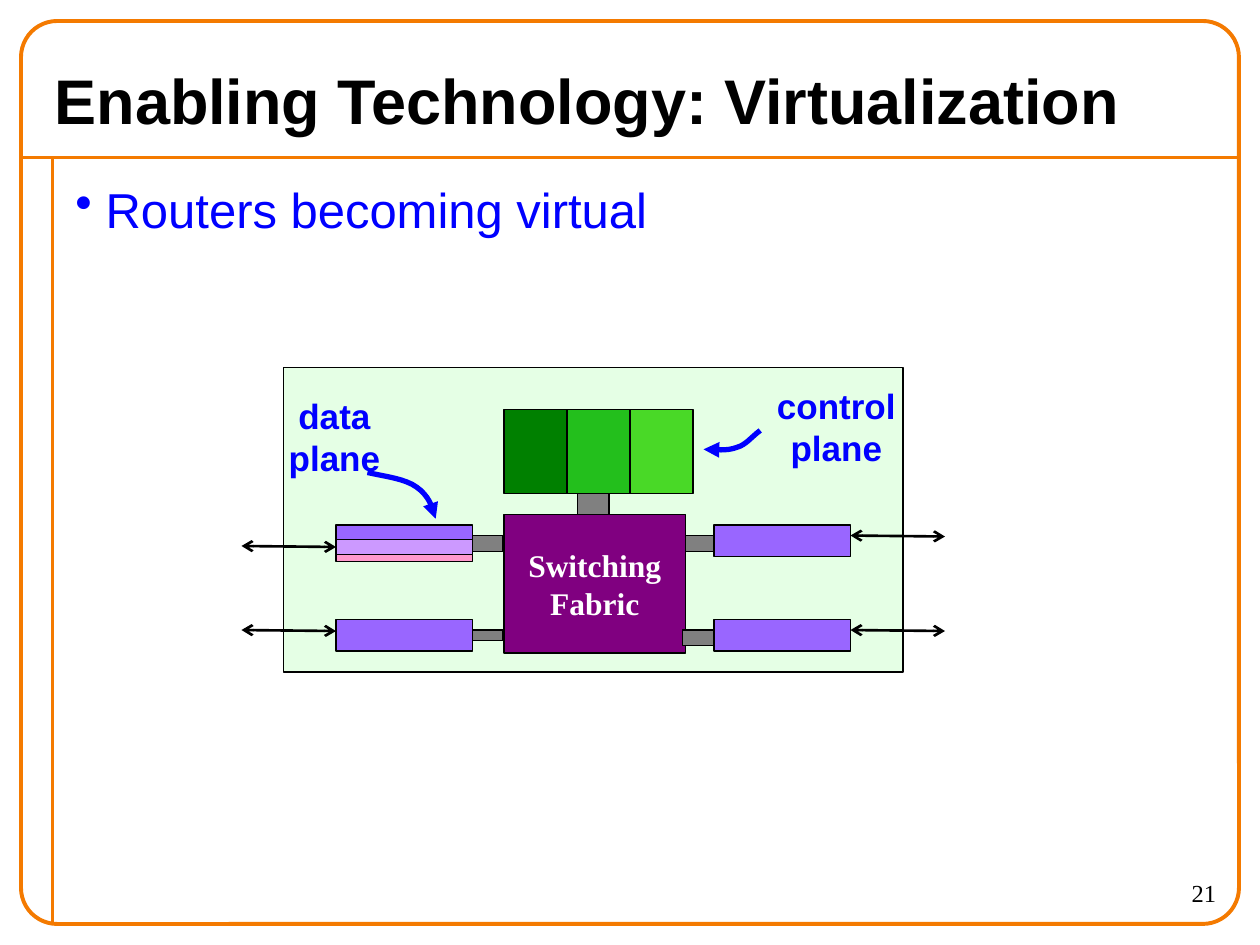
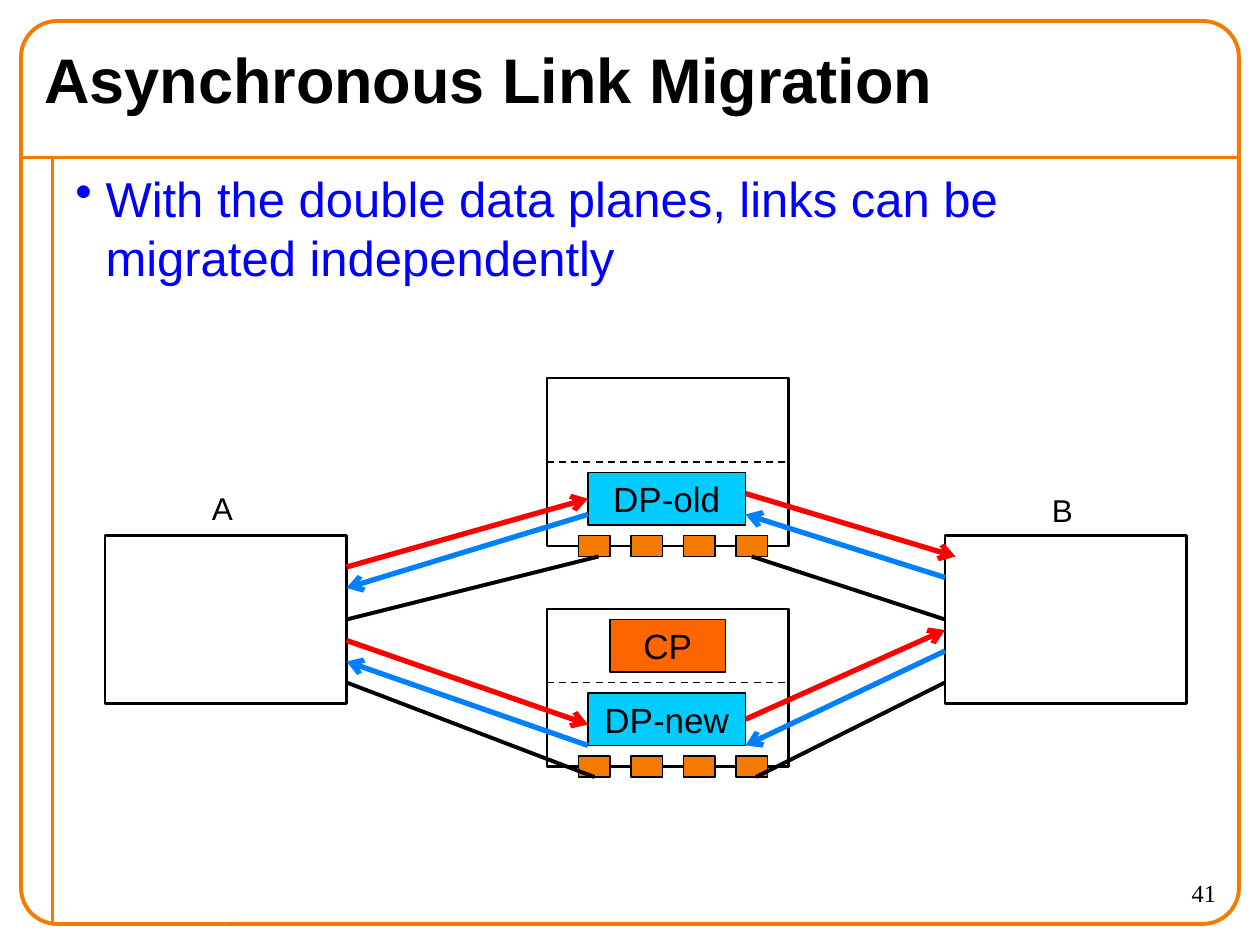
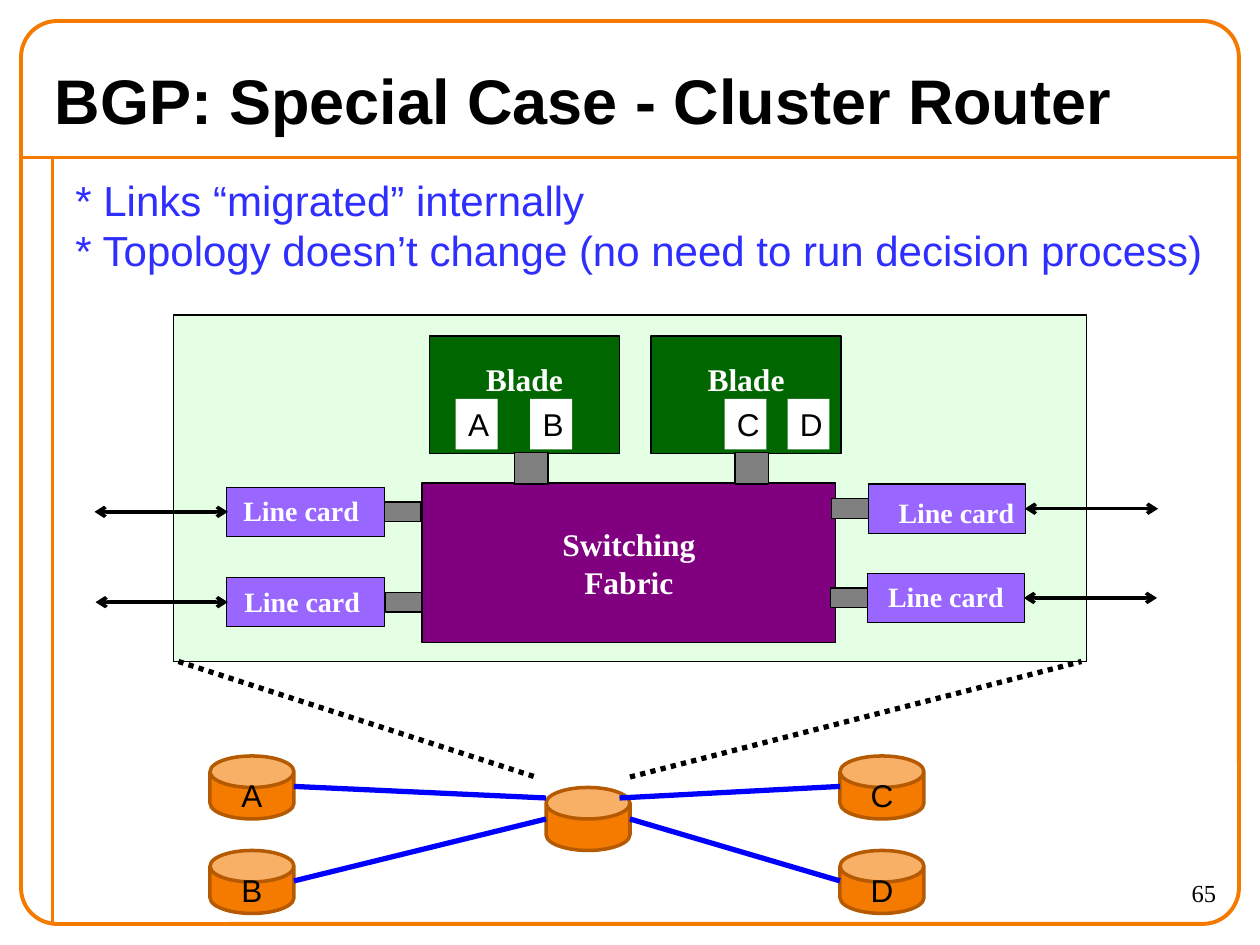
import pptx
import pptx.util
import pptx.dml.color
import pptx.enum.dml
import pptx.enum.shapes
import pptx.enum.text
import pptx.oxml.ns
import lxml.etree

RGB = pptx.dml.color.RGBColor
SHAPE = pptx.enum.shapes.MSO_SHAPE
ALIGN = pptx.enum.text.PP_ALIGN
ANCHOR = pptx.enum.text.MSO_ANCHOR
DASH = pptx.enum.dml.MSO_LINE
qn = pptx.oxml.ns.qn

BLACK = RGB(0x00, 0x00, 0x00)
WHITE = RGB(0xFF, 0xFF, 0xFF)
ORANGE = RGB(0xF4, 0x7A, 0x00)
BROWN = RGB(0xB5, 0x5A, 0x00)
CONTROL_ORANGE = RGB(0xFF, 0x66, 0x00)
BLUE = RGB(0x00, 0x00, 0xFF)
NOTE_BLUE = RGB(0x2E, 0x2E, 0xFF)
LINK_BLUE = RGB(0x00, 0x80, 0xFF)
CYAN = RGB(0x00, 0xCC, 0xFF)
RED = RGB(0xFF, 0x00, 0x00)
GRAY = RGB(0x80, 0x80, 0x80)
PALE_GREEN = RGB(0xCC, 0xFF, 0xCC)
BLADE_GREEN = RGB(0x00, 0x66, 0x00)
PLANE_GREENS = (RGB(0x00, 0x80, 0x00), RGB(0x23, 0xBF, 0x1C), RGB(0x49, 0xD9, 0x27))
PURPLE = RGB(0x80, 0x00, 0x80)
VIOLET = RGB(0x99, 0x66, 0xFF)
LILAC = RGB(0xCC, 0x99, 0xFF)
PINK = RGB(0xFF, 0x99, 0xCC)

SANS, SERIF = "Arial", "Times New Roman"
COLUMNS, ROWS = 120, 90
CELL = pptx.util.Inches(10) // COLUMNS


def cells(*counts):
    """Turn counts of grid columns or rows into slide lengths."""
    return [round(count * CELL) for count in counts]


def add_element(parent, tag, **attributes):
    return lxml.etree.SubElement(parent, qn(tag), attributes)


def write(shape, text, size=18, font=SANS, color=BLACK, bold=False, align=ALIGN.LEFT,
          anchor=ANCHOR.TOP, wrap=True, bullet=None, top=0.05, bottom=0.05):
    frame = shape.text_frame
    frame.text = text
    frame.word_wrap = wrap
    frame.vertical_anchor = anchor
    frame.margin_top = pptx.util.Inches(top)
    frame.margin_bottom = pptx.util.Inches(bottom)
    for para in frame.paragraphs:
        para.alignment = align
        if bullet:
            indent = pptx.util.Inches(0.24)
            properties = para._p.get_or_add_pPr()
            properties.set("marL", str(indent))
            properties.set("indent", str(-indent))
            add_element(properties, "a:buChar", char=bullet)
        for span in para.runs:
            span.font.name = font
            span.font.size = pptx.util.Pt(size)
            span.font.bold = bold
            span.font.color.rgb = color


def add_text(page, at, text, **text_format):
    box = page.shapes.add_textbox(*cells(*at))
    write(box, text, **text_format)
    return box


def add_block(page, at, fill=None, line=BLACK, width=0.75, kind=SHAPE.RECTANGLE,
              adjust=None, opacity=None):
    block = page.shapes.add_shape(kind, *cells(*at))
    block.shadow.inherit = False
    if adjust is not None:
        block.adjustments[0] = adjust
    if fill is None:
        block.fill.background()
    else:
        block.fill.solid()
        block.fill.fore_color.rgb = fill
    if opacity is not None:
        color = block.element.spPr.find(".//" + qn("a:srgbClr"))
        add_element(color, "a:alpha", val=str(opacity * 1000))
    if line is None:
        block.line.fill.background()
    else:
        block.line.color.rgb = line
        block.line.width = pptx.util.Pt(width)
    return block


def add_arrowheads(shape, head=None, tail=None):
    outline = shape.element.spPr.find(qn("a:ln"))
    for tag, kind in (("a:headEnd", head), ("a:tailEnd", tail)):
        if kind:
            add_element(outline, tag, type=kind)


def add_line(page, start, end, color=BLACK, width=2.25, dash=None, head=None, tail=None):
    line = page.shapes.add_connector(pptx.enum.shapes.MSO_CONNECTOR.STRAIGHT,
                                     *cells(*start, *end))
    line.line.color.rgb = color
    line.line.width = pptx.util.Pt(width)
    if dash:
        line.line.dash_style = dash
    add_arrowheads(line, head, tail)
    add_element(line.element.spPr, "a:effectLst")


def add_two_way_link(page, start, end, width):
    add_line(page, start, end, width=width, head="arrow", tail="arrow")


def curve_points(knots, steps=8):
    """Points along joined cubic curves: a start, then three knots per curve."""
    for first in range(0, len(knots) - 1, 3):
        a, b, c, d = knots[first:first + 4]
        for step in range(1, steps + 1):
            t = step / steps
            weights = ((1 - t) ** 3, 3 * t * (1 - t) ** 2, 3 * t * t * (1 - t), t ** 3)
            yield tuple(sum(weight * knot[axis] for weight, knot in zip(weights, (a, b, c, d)))
                        for axis in (0, 1))


def add_curved_arrow(page, knots):
    builder = page.shapes.build_freeform(*cells(*knots[0]))
    builder.add_line_segments([cells(*point) for point in curve_points(knots)], close=False)
    arrow = builder.convert_to_shape()
    arrow.shadow.inherit = False
    arrow.fill.background()
    arrow.line.color.rgb = BLUE
    arrow.line.width = pptx.util.Pt(3)
    add_arrowheads(arrow, tail="triangle")


def add_page(deck, title, number, title_at=(4, 5, 105.8, 9)):
    """Add a slide with the frame, title and page number that all slides share."""
    page = deck.slides.add_slide(deck.slide_layouts[5])
    add_line(page, (2, 15), (118, 15), color=ORANGE)
    add_line(page, (5, 15), (5, 88), color=ORANGE)
    add_block(page, (2, 2, COLUMNS - 4, ROWS - 4), line=ORANGE, width=2.25,
              kind=SHAPE.ROUNDED_RECTANGLE, adjust=0.04)
    heading = page.shapes.title
    heading.left, heading.top, heading.width, heading.height = cells(*title_at)
    write(heading, title, size=36, bold=True, anchor=ANCHOR.MIDDLE)
    add_text(page, (105, 83, 12, 5), str(number), size=14, font=SERIF, align=ALIGN.RIGHT)
    return page


def add_bullet(page, at, text):
    add_text(page, at, text, size=28, color=BLUE, bullet="•", top=0.09)


def add_chassis(page, at):
    add_block(page, at, PALE_GREEN, opacity=50)


def add_hardware(page, at, fill, text, **text_format):
    block = add_block(page, at, fill)
    write(block, text, font=SERIF, color=WHITE, bold=True, align=ALIGN.CENTER,
          anchor=ANCHOR.MIDDLE, wrap=False, **text_format)


def add_plane(page, at, fill, text):
    write(add_block(page, at, fill, width=1), text, size=20, align=ALIGN.CENTER,
          anchor=ANCHOR.MIDDLE)


def add_router(page, left, top, name=""):
    can = add_block(page, (left, top, 8, 6), ORANGE, BROWN, 2, kind=SHAPE.CAN, adjust=0.59)
    if name:
        write(can, name, align=ALIGN.CENTER, anchor=ANCHOR.MIDDLE)


def build_virtualization(deck):
    page = add_page(deck, "Enabling Technology: Virtualization", 21)
    add_bullet(page, (6, 16, 111, 72), "Routers becoming virtual")
    add_chassis(page, (27, 35, 59, 29))
    add_hardware(page, (48, 49, 17.3, 13.2), PURPLE, "Switching\nFabric")
    for stub in ((55, 47, 3, 2), (45, 51, 2.9, 1.5), (45, 60, 2.9, 1),
                 (65.3, 51, 2.7, 1.5), (65, 60, 3, 1.5)):
        add_block(page, stub, GRAY)
    for left, top in ((32, 59), (68, 50), (68, 59)):
        add_block(page, (left, top, 13, 3), VIOLET)

    label = dict(size=20, color=BLUE, bold=True, align=ALIGN.CENTER)
    add_curved_arrow(page, [(35, 45), (36.8, 45.4), (38.6, 45.6), (39.7, 46.4),
                            (40.8, 47.2), (41.2, 48.2), (41.5, 49.4)])
    add_text(page, (24, 37, 15.7, 9.2), "data plane", **label)
    add_curved_arrow(page, [(72.4, 41), (71.6, 41.6), (71, 42.4), (70.2, 42.6),
                            (69.2, 43), (68.2, 42.8), (67, 42.8)])
    add_text(page, (70, 36, 19.3, 9.2), "control plane", **label)

    for index, green in enumerate(PLANE_GREENS):
        add_block(page, (48 + 6 * index, 39, 6, 8), green)
    for index, (height, fill) in enumerate(((1.4, VIOLET), (1.4, LILAC), (0.7, PINK))):
        add_block(page, (32, 50 + 1.4 * index, 13, height), fill)
    for left, top in ((23, 52), (23, 60), (81, 60), (81, 51)):
        add_two_way_link(page, (left, top), (left + 9, top + 0.1), width=1.5)


def build_link_migration(deck):
    page = add_page(deck, "Asynchronous Link Migration", 41, title_at=(3, 3, 112, 9))
    add_bullet(page, (6, 15, 108, 59.4),
               "With the double data planes, links can be migrated independently")
    for left, top, height in ((52.1, 36, 16), (52.1, 58, 15), (10, 51, 16), (90, 51, 16)):
        add_block(page, (left, top, 23, height), width=1.5)
    add_text(page, (19, 46, 4.4, 4.8), "A", wrap=False)
    add_text(page, (99, 46.2, 4.4, 4.8), "B", wrap=False)
    add_plane(page, (58.1, 59, 11, 5), CONTROL_ORANGE, "CP")
    for top, name in ((44, "DP-old"), (65, "DP-new")):
        add_line(page, (52.1, top), (75.1, top), width=1, dash=DASH.DASH)
        for port in range(4):
            add_block(page, (55.1 + 5 * port, top + 7, 3, 2), ORANGE)
        add_plane(page, (56, top + 1, 15, 5), CYAN, name)

    traffic = {
        RED: (((33, 54), (56, 47.5)), ((71, 47), (91, 53)),
              ((33, 61), (56, 69)), ((71, 68.5), (90, 60))),
        LINK_BLUE: (((56, 49), (33, 56)), ((90, 55), (71, 49)),
                    ((90, 62), (71, 71)), ((56, 71), (33, 63))),
    }
    for color, flows in traffic.items():
        for start, end in flows:
            add_line(page, start, end, color=color, width=3, tail="arrow")
    for start, end in (((33, 59), (57, 53)), ((71.6, 53), (90, 59)),
                       ((33, 65), (56.6, 74)), ((72, 74), (90, 65))):
        add_line(page, start, end)


def add_line_card(page, card, stub_left, label, link_ends):
    left, top = card
    add_block(page, (left, top, 15, 4.7), VIOLET)
    add_block(page, (stub_left, top + 1.4, 3.5, 1.9), GRAY)
    add_text(page, (*label, 13.4, 4.4), "Line card", size=16, font=SERIF, color=WHITE,
             bold=True, wrap=False)
    inner, outer = link_ends
    add_two_way_link(page, (inner, top + 2.35), (outer, top + 2.35), width=2)


def build_cluster_router(deck):
    page = add_page(deck, "BGP: Special Case - Cluster Router", 65)
    add_chassis(page, (16.5, 30, 87, 33))
    add_hardware(page, (40.2, 46, 39.4, 15.2), PURPLE, "Switching\nFabric")
    for blade_left, neck_left in ((40.9, 49), (62, 70)):
        add_hardware(page, (blade_left, 32, 18.1, 11.2), BLADE_GREEN, "Blade", bottom=0.3)
        add_block(page, (neck_left, 43.1, 3.2, 3), GRAY)
    for left, name in ((43.4, "A"), (50.5, "B"), (69, "C"), (75, "D")):
        write(add_block(page, (left, 38, 4, 4.8), WHITE, line=None), name)

    add_line_card(page, (21.6, 46.4), 36.6, (22, 46.4), (21.7, 9))
    add_line_card(page, (21.6, 55), 36.7, (22.1, 55.1), (21.7, 9.1))
    add_line_card(page, (82.7, 46.1), 79.2, (84.4, 46.6), (97.6, 110.3))
    add_line_card(page, (82.6, 54.6), 79.1, (83.4, 54.6), (97.5, 110.2))

    for left, top, name in ((20, 72, "A"), (20, 81, "B"), (80, 72, "C"), (80, 81, "D")):
        add_router(page, left, top, name)
    add_router(page, 52, 75)
    for start, end in (((28, 74.9), (52, 76)), ((28, 83.9), (52, 78)),
                       ((59, 76), (80, 74.9)), ((60, 78), (80, 83.9))):
        add_line(page, start, end, color=BLUE, width=3)
    for start, end in (((17, 63), (51, 74)), ((60, 74), (103, 63))):
        add_line(page, start, end, width=3, dash=DASH.ROUND_DOT)
    add_text(page, (6, 16, 109.8, 10.9),
             "* Links “migrated” internally\n"
             "* Topology doesn’t change (no need to run decision process)",
             size=24, color=NOTE_BLUE, wrap=False)


def main():
    deck = pptx.Presentation()
    deck.slide_width, deck.slide_height = cells(COLUMNS, ROWS)
    build_virtualization(deck)
    build_link_migration(deck)
    build_cluster_router(deck)
    deck.save("out.pptx")


if __name__ == "__main__":
    main()
